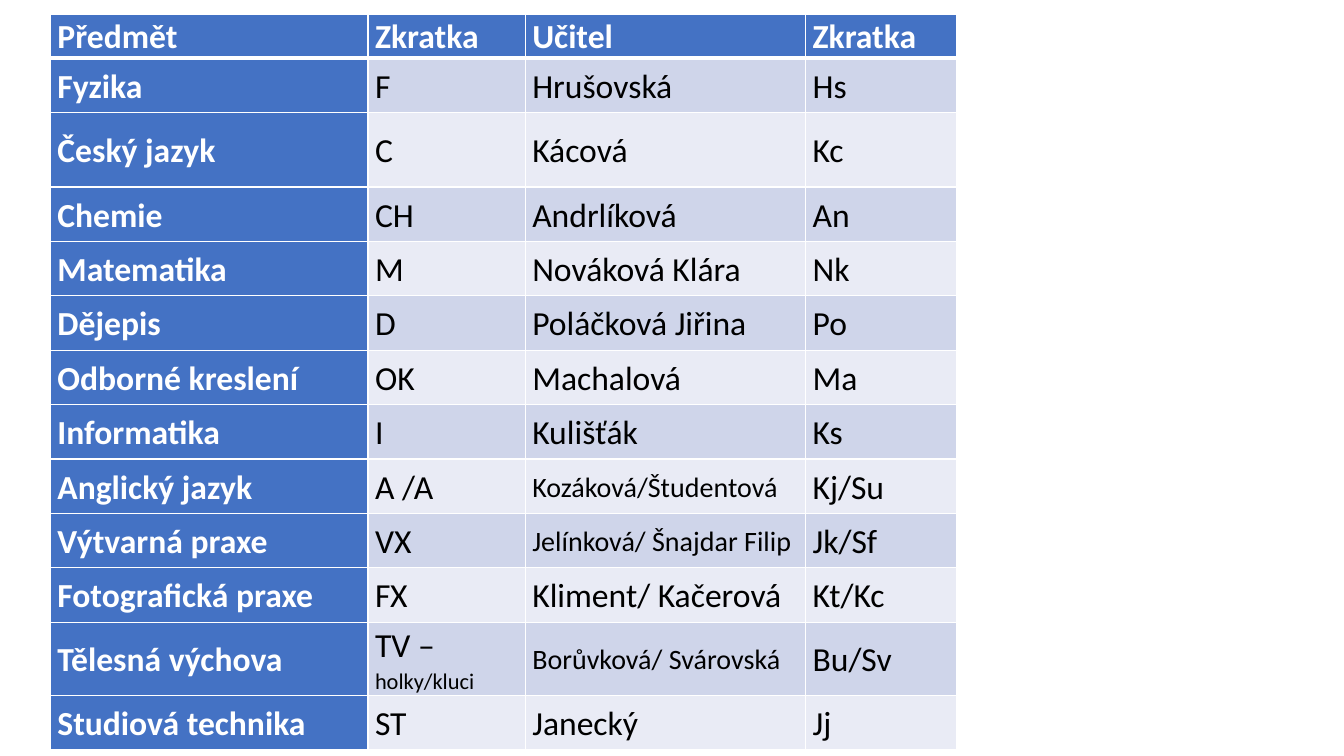
from dataclasses import dataclass

from lxml import etree
from pptx import Presentation
from pptx import util as u
from pptx.dml.color import RGBColor
from pptx.enum import text
from pptx.oxml import ns

# Content: a cell is its text, or a list of (text, size) runs
HEADINGS = ("Předmět", "Zkratka", "Učitel", "Zkratka")
SUBJECTS = [
    ("Fyzika", "F", "Hrušovská", "Hs"),
    ("Český jazyk", "C", "Kácová", "Kc"),
    ("Chemie", "CH", "Andrlíková", "An"),
    ("Matematika", "M", "Nováková Klára", "Nk"),
    ("Dějepis", "D", "Poláčková Jiřina", "Po"),
    ("Odborné kreslení", "OK", "Machalová", "Ma"),
    ("Informatika", "I", "Kulišťák", "Ks"),
    ("Anglický jazyk", "A /A", [("Kozáková/Študentová", "medium")], "Kj/Su"),
    ("Výtvarná praxe", "VX", [("Jelínková/ Šnajdar Filip", "medium")], "Jk/Sf"),
    ("Fotografická praxe", "FX", "Kliment/ Kačerová", "Kt/Kc"),
    ("Tělesná výchova", [("TV – ", "body"), ("holky/kluci", "small")],
     [("Borůvková/ Svárovská", "medium")], "Bu/Sv"),
    ("Studiová technika", "ST", "Janecký", "Jj"),
]


@dataclass(frozen=True)
class Theme:
    font: str = "Calibri"
    body: int = 24
    medium: int = 20
    small: int = 16
    heading_fill: str = "4472C4"
    bands: tuple = ("CFD5EA", "E9EBF5")
    ink: str = "000000"
    white: str = "FFFFFF"
    rule: int = 1
    heading_rule: int = 3


THEME = Theme()

# Table geometry in inches
LEFT, TOP = 0.5, 0.14
COLUMN_WIDTHS = (3.15, 1.56, 2.78, 1.5)
HEADING_HEIGHT, ROW_HEIGHT, TALL_HEIGHT = 0.36, 0.54, 0.74
TALL_ROW = 2


def add_borders(cell, row):
    properties = cell._tc.get_or_add_tcPr()
    heading_edge = {0: "lnB", 1: "lnT"}.get(row)
    for side in ("lnL", "lnR", "lnT", "lnB"):
        points = THEME.heading_rule if side == heading_edge else THEME.rule
        line = etree.SubElement(properties, ns.qn(f"a:{side}"), w=str(u.Pt(points)))
        fill = etree.SubElement(line, ns.qn("a:solidFill"))
        etree.SubElement(fill, ns.qn("a:srgbClr"), val=THEME.white)


def fill_cell(cell, content, row, column):
    is_heading = row == 0 or column == 0
    add_borders(cell, row)
    cell.fill.solid()
    cell.fill.fore_color.rgb = RGBColor.from_string(
        THEME.heading_fill if is_heading else THEME.bands[(row - 1) % 2])
    cell.vertical_anchor = text.MSO_ANCHOR.MIDDLE
    cell.margin_left = cell.margin_right = u.Inches(0.07)
    cell.margin_top = cell.margin_bottom = 0

    paragraph = cell.text_frame.paragraphs[0]
    paragraph.line_spacing = 1.07
    paragraph.space_after = u.Pt(8)
    paragraph.font.name = THEME.font
    paragraph.font.bold = is_heading
    paragraph.font.color.rgb = RGBColor.from_string(
        THEME.white if is_heading else THEME.ink)
    runs = [(content, "body")] if isinstance(content, str) else content
    for words, size in runs:
        run = paragraph.add_run()
        run.text = words
        run.font.size = u.Pt(getattr(THEME, size))


def main():
    deck = Presentation()
    deck.slide_width, deck.slide_height = u.Inches(13.33), u.Inches(7.5)
    slide = deck.slides.add_slide(deck.slide_layouts[6])

    # Timetable of subjects and teachers
    rows = [HEADINGS, *SUBJECTS]
    heights = [HEADING_HEIGHT] + [ROW_HEIGHT] * len(SUBJECTS)
    heights[TALL_ROW] = TALL_HEIGHT
    timetable = slide.shapes.add_table(
        len(rows), len(HEADINGS), u.Inches(LEFT), u.Inches(TOP),
        u.Inches(sum(COLUMN_WIDTHS)), u.Inches(sum(heights))).table
    timetable.first_col = True
    for column, width in zip(timetable.columns, COLUMN_WIDTHS):
        column.width = u.Inches(width)

    # Cells
    for r, (contents, height) in enumerate(zip(rows, heights)):
        timetable.rows[r].height = u.Inches(height)
        for c, content in enumerate(contents):
            fill_cell(timetable.cell(r, c), content, r, c)

    deck.save("out.pptx")


if __name__ == "__main__":
    main()
